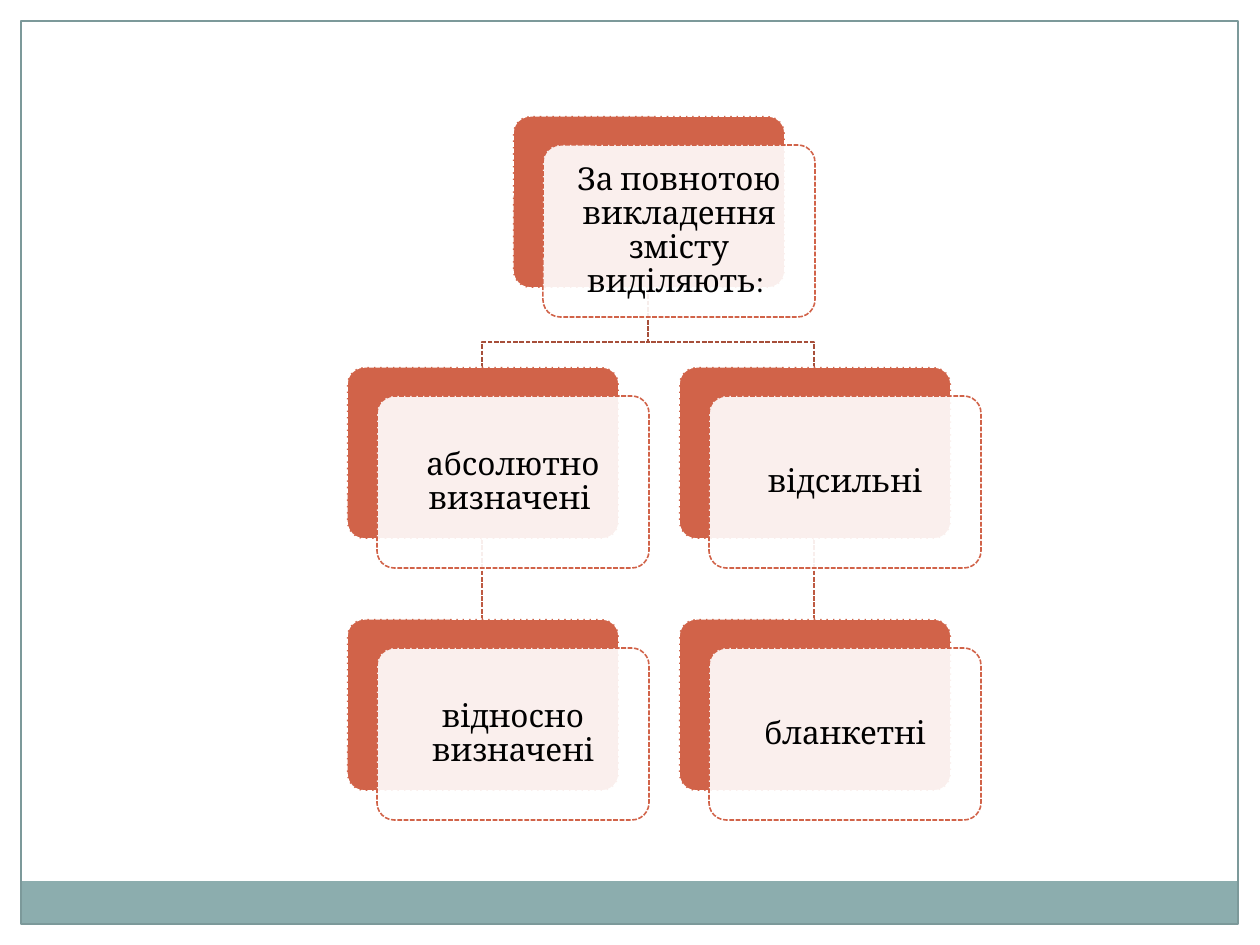
import pptx
import pptx.util
from pptx.dml.color import RGBColor
from pptx.enum.dml import MSO_LINE
from pptx.enum.shapes import MSO_CONNECTOR, MSO_SHAPE
from pptx.enum.text import MSO_ANCHOR, PP_ALIGN
from pptx.oxml.ns import qn
from lxml import etree

COLORS = {
    "white": "FFFFFF", "black": "000000", "frame": "7C999A", "band": "8CADAE",
    "card": "D16349", "elbow": "A74F3A", "drop": "BE5A42",
}
FONT, FONT_SIZE = "Cambria", 18

# Text, column (in half steps), row
CARDS = [
    ("За повнотою викладення змісту виділяють: ", 1, 0),
    ("абсолютно визначені ", 0, 1),
    ("відносно визначені", 0, 2),
    ("відсильні", 2, 1),
    ("бланкетні", 2, 2),
]
# Left, top, width, height, fill, line
BACKGROUND = [
    (0, 0, 1260, 21, "white", None),
    (1239, 0, 21, 945, "white", None),
    (0, 0, 21, 945, "white", None),
    (21, 881, 1217, 43, "band", None),
    (21, 21, 1217, 903, None, "frame"),
]
LEFT, HALF_STEP = 347, 166
ROW_TOPS = (116, 367, 619)
CARD_WIDTH, CARD_HEIGHT = 272, 172
PANEL_SHIFT = (30, 29)
BEND_Y = 342
DASH_WIDTH = 0.9


def px(value):
    return pptx.util.Emu(round(value * 914400 / 126))


def color(name):
    return RGBColor.from_string(COLORS[name])


def style_line(line, name, width, dashed=True):
    line.color.rgb = color(name)
    line.width = pptx.util.Pt(width)
    if dashed:
        line.dash_style = MSO_LINE.SQUARE_DOT


def add_box(slide, kind, left, top, width, height, fill):
    shape = slide.shapes.add_shape(kind, px(left), px(top), px(width), px(height))
    shape.shadow.inherit = False
    if fill:
        shape.fill.solid()
        shape.fill.fore_color.rgb = color(fill)
    else:
        shape.fill.background()
    shape.line.fill.background()
    return shape


def add_elbow(slide, start, end):
    points = [(start[0], BEND_Y), (end[0], BEND_Y), end]
    builder = slide.shapes.build_freeform(*start, scale=px(1))
    builder.add_line_segments(points, close=False)
    shape = builder.convert_to_shape()
    shape.shadow.inherit = False
    shape.fill.background()
    style_line(shape.line, "elbow", DASH_WIDTH)


def add_drop(slide, start, end):
    """Straight vertical link between two cards of one column."""
    connector = slide.shapes.add_connector(
        MSO_CONNECTOR.STRAIGHT, *(px(value) for value in start + end))
    style_line(connector.line, "drop", DASH_WIDTH)
    etree.SubElement(connector._element.spPr, qn("a:effectLst"))


def add_card(slide, text, left, top):
    shift_x, shift_y = PANEL_SHIFT
    for x, y, fill, line in ((left, top, "card", "white"),
                             (left + shift_x, top + shift_y, "white", "card")):
        panel = add_box(slide, MSO_SHAPE.ROUNDED_RECTANGLE, x, y,
                        CARD_WIDTH, CARD_HEIGHT, fill)
        panel.adjustments[0] = 0.1
        style_line(panel.line, line, DASH_WIDTH)
    fill_color = panel._element.spPr.find(qn("a:solidFill"))[0]
    etree.SubElement(fill_color, qn("a:alpha"), val="90000")

    frame = panel.text_frame
    frame.word_wrap = True
    frame.vertical_anchor = MSO_ANCHOR.MIDDLE
    frame.margin_left = frame.margin_right = px(4)
    frame.margin_top = frame.margin_bottom = px(4)
    paragraph = frame.paragraphs[0]
    paragraph.text = text
    paragraph.alignment = PP_ALIGN.CENTER
    paragraph.line_spacing = 0.9
    paragraph.font.name = FONT
    paragraph.font.size = pptx.util.Pt(FONT_SIZE)
    paragraph.font.color.rgb = color("black")


def main():
    presentation = pptx.Presentation()
    presentation.slide_width, presentation.slide_height = px(1260), px(945)
    slide = presentation.slides.add_slide(presentation.slide_layouts[6])

    for *place, fill, line in BACKGROUND:
        shape = add_box(slide, MSO_SHAPE.RECTANGLE, *place, fill)
        if line:
            style_line(shape.line, line, 0.75, dashed=False)

    def center(column):
        return LEFT + column * HALF_STEP + CARD_WIDTH // 2 - 1

    root_bottom, child_bottom = (top + CARD_HEIGHT for top in ROW_TOPS[:2])
    for column in (2, 0):
        x = center(column)
        add_drop(slide, (x, child_bottom), (x, ROW_TOPS[2]))
        add_elbow(slide, (center(1), root_bottom), (x, ROW_TOPS[1]))

    for text, column, row in CARDS:
        add_card(slide, text, LEFT + column * HALF_STEP, ROW_TOPS[row])

    presentation.save("out.pptx")


if __name__ == "__main__":
    main()
